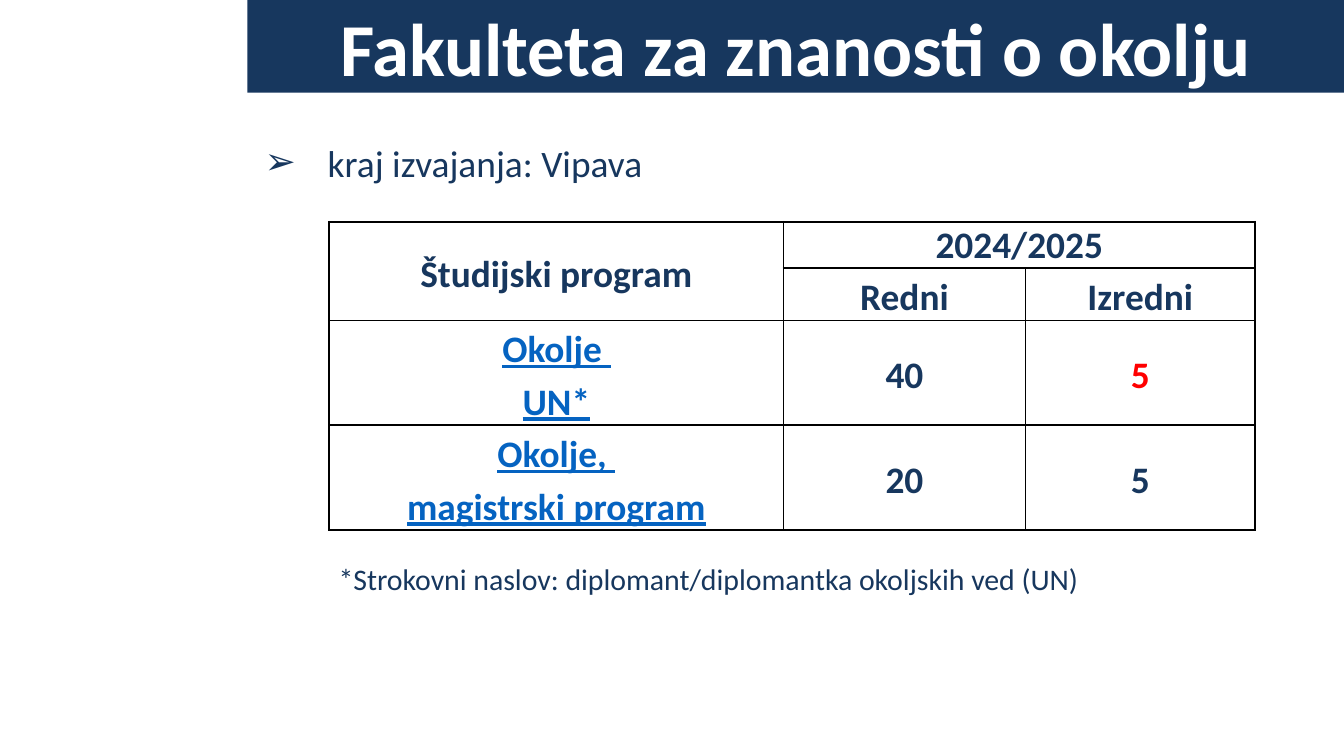
from dataclasses import dataclass

from lxml import etree
from pptx import Presentation
from pptx import util as u
from pptx.dml.color import RGBColor
from pptx.enum import shapes, text
from pptx.oxml import ns


@dataclass(frozen=True)
class Theme:
    font: str = "Calibri"
    navy: str = "17375E"
    white: str = "FFFFFF"
    black: str = "000000"
    red: str = "FF0000"
    link: str = "0563C1"
    title: int = 40
    body: int = 20
    note: int = 16
    border: int = 1
    plain_table: str = "{2D5ABB26-0587-4C30-8999-92F81FD0307C}"


class SlideWriter:
    def __init__(self, deck, theme):
        self.theme = theme
        self.slide = deck.slides.add_slide(deck.slide_layouts[6])

    def area(self, place):
        return [u.Inches(length) for length in place]

    def add_span(self, para, words, size, color, bold=False, underline=False):
        span = para.add_run()
        span.text = words
        span.font.name = self.theme.font
        span.font.size = u.Pt(size)
        span.font.color.rgb = RGBColor.from_string(color)
        span.font.bold = bold
        span.font.underline = underline

    def set_insets(self, target, insets):
        sides = ("margin_left", "margin_top", "margin_right", "margin_bottom")
        for side, inset in zip(sides, insets):
            setattr(target, side, u.Inches(inset))

    def add_banner(self, place, words):
        box = self.slide.shapes.add_shape(shapes.MSO_SHAPE.RECTANGLE, *self.area(place))
        box.shadow.inherit = False
        box.fill.solid()
        box.fill.fore_color.rgb = RGBColor.from_string(self.theme.navy)
        box.line.fill.background()
        frame = box.text_frame
        frame.word_wrap = True
        frame.vertical_anchor = text.MSO_ANCHOR.MIDDLE
        self.set_insets(frame, [0.1] * 4)
        para = frame.paragraphs[0]
        para.alignment = text.PP_ALIGN.CENTER
        self.add_span(para, words, self.theme.title, self.theme.white, bold=True)

    def add_bullet(self, place, words):
        frame = self.slide.shapes.add_textbox(*self.area(place)).text_frame
        frame.word_wrap = True
        self.set_insets(frame, [0.1] * 4)
        para = frame.paragraphs[0]
        props = para._p.get_or_add_pPr()
        props.set("marL", str(u.Inches(0.5)))
        props.set("indent", str(u.Inches(-0.47)))
        color = etree.SubElement(props, ns.qn("a:buClr"))
        etree.SubElement(color, ns.qn("a:srgbClr"), val=self.theme.navy)
        etree.SubElement(props, ns.qn("a:buFont"), typeface=self.theme.font)
        etree.SubElement(props, ns.qn("a:buChar"), char="➢")
        self.add_span(para, words, self.theme.body, self.theme.navy)

    def add_table(self, left, top, widths, heights):
        place = self.area((left, top, sum(widths), sum(heights)))
        table = self.slide.shapes.add_table(len(heights), len(widths), *place).table
        table.first_row = False
        table.horz_banding = False
        style = table._tbl.tblPr.find(ns.qn("a:tableStyleId"))
        style.text = self.theme.plain_table
        for column, width in zip(table.columns, widths):
            column.width = u.Inches(width)
        for row, height in zip(table.rows, heights):
            row.height = u.Inches(height)
        for cell in table.iter_cells():
            cell.fill.background()
        return table

    def add_borders(self, table):
        for cell in table.iter_cells():
            props = cell._tc.get_or_add_tcPr()
            for index, side in enumerate(("lnL", "lnR", "lnT", "lnB")):
                line = etree.Element(ns.qn("a:" + side), w=str(u.Pt(self.theme.border)))
                fill = etree.SubElement(line, ns.qn("a:solidFill"))
                etree.SubElement(fill, ns.qn("a:srgbClr"), val=self.theme.black)
                props.insert(index, line)

    def fill_cell(self, cell, lines, color, underline=False, spacing=1.15, after=10,
                  insets=(0.04, 0, 0.04, 0)):
        cell.vertical_anchor = text.MSO_ANCHOR.MIDDLE
        self.set_insets(cell, insets)
        frame = cell.text_frame
        for index, words in enumerate(lines):
            para = frame.add_paragraph() if index else frame.paragraphs[0]
            para.alignment = text.PP_ALIGN.CENTER
            para.line_spacing = spacing
            para.space_after = u.Pt(after)
            self.add_span(para, words, self.theme.body, color, True, underline)

    def add_programmes(self, programmes):
        theme = self.theme
        table = self.add_table(2.45, 1.65, (3.38, 1.8, 1.71), (0.34, 0.39, 0.78, 0.78))
        self.add_borders(table)
        table.cell(0, 0).merge(table.cell(1, 0))
        table.cell(0, 1).merge(table.cell(0, 2))
        self.fill_cell(table.cell(0, 0), ["Študijski program"], theme.navy)
        self.fill_cell(table.cell(0, 1), ["2024/2025"], theme.navy, spacing=1.0, after=0,
                       insets=(0.01, 0.01, 0.01, 0))
        for column, heading in enumerate(("Redni", "Izredni"), 1):
            self.fill_cell(table.cell(1, column), [heading], theme.navy)
        for row, (name, places) in enumerate(programmes, 2):
            self.fill_cell(table.cell(row, 0), name, theme.link, underline=True, after=0)
            for column, (count, color) in enumerate(places, 1):
                self.fill_cell(table.cell(row, column), [count], color)

    def add_note(self, words):
        table = self.add_table(2.45, 4.14, (7.55,), (0.82, 0.25))
        cell = table.cell(0, 0)
        self.set_insets(cell, (0.07, 0.04, 0.07, 0.04))
        para = cell.text_frame.paragraphs[0]
        self.add_span(para, words, self.theme.note, self.theme.navy)


def main():
    deck = Presentation()
    deck.slide_width = u.Inches(10)
    deck.slide_height = deck.slide_width * 9 // 16
    theme = Theme()
    page = SlideWriter(deck, theme)
    page.add_bullet((1.84, 0.94, 8.16, 3.84), "kraj izvajanja: Vipava")
    page.add_programmes([
        (("Okolje ", "UN*"), (("40", theme.navy), ("5", theme.red))),
        (("Okolje, ", "magistrski program"), (("20", theme.navy), ("5", theme.navy))),
    ])
    page.add_note("*Strokovni naslov: diplomant/diplomantka okoljskih ved (UN)")
    page.add_banner((1.84, 0, 8.16, 0.69), "Fakulteta za znanosti o okolju")
    deck.save("out.pptx")


if __name__ == "__main__":
    main()
